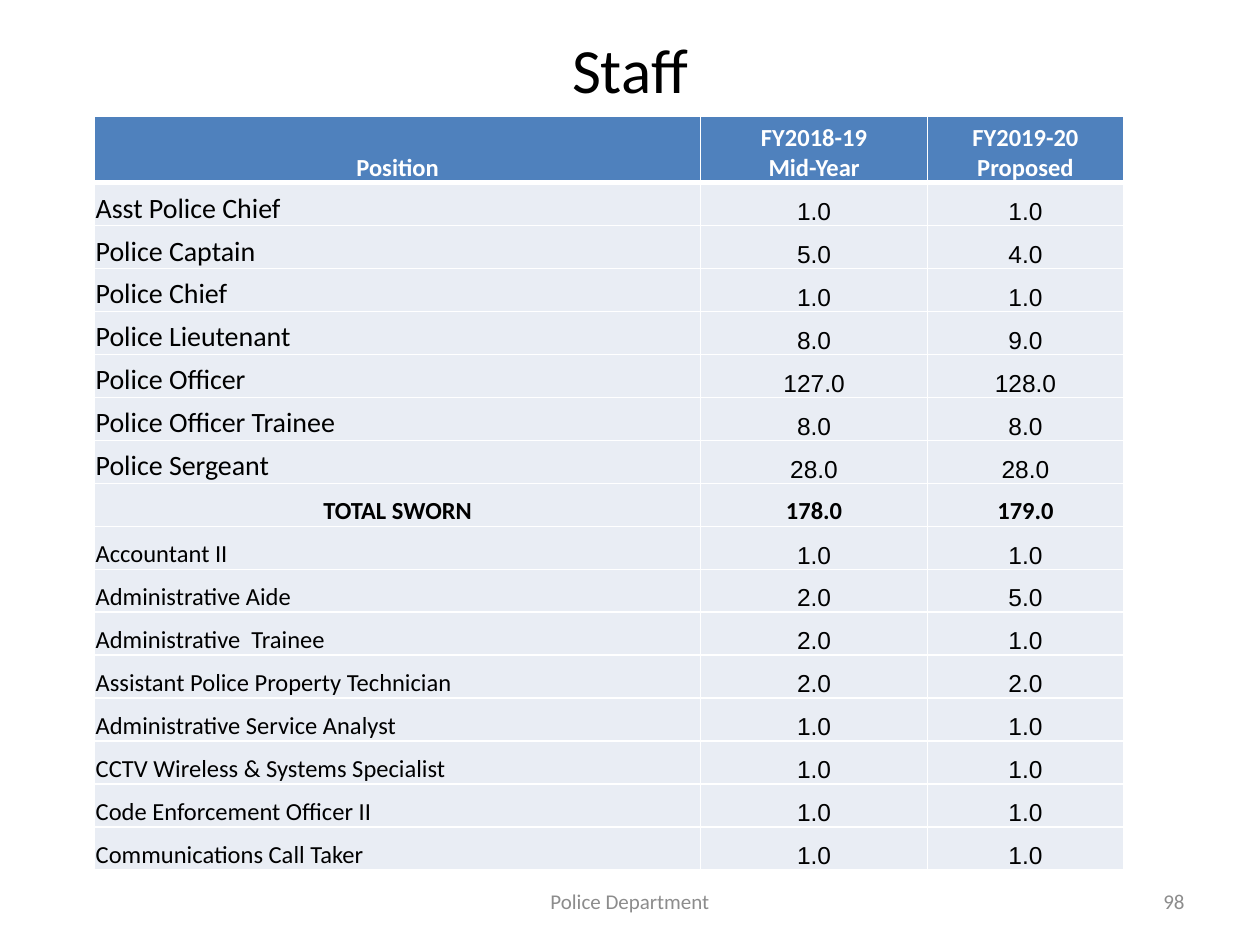
"""Build the police department staff slide."""
import dataclasses

import lxml.etree
import pptx
import pptx.dml.color
import pptx.enum.text
import pptx.oxml.ns
import pptx.util

Pt = pptx.util.Pt
ALIGN = pptx.enum.text.PP_ALIGN
ANCHOR = pptx.enum.text.MSO_ANCHOR


@dataclasses.dataclass(frozen=True)
class Theme:
    text: str = "000000"
    white: str = "FFFFFF"
    header: str = "4F81BD"
    body: str = "E9EDF4"
    muted: str = "8C8C8C"
    font: str = "Calibri"
    number_font: str = "Arial"
    title_size: int = 36
    sworn_size: int = 16
    table_size: int = 14
    footer_size: int = 12


def rgb(value):
    return pptx.dml.color.RGBColor.from_string(value)


def write(para, text, *, font, size, color, bold=False, align=ALIGN.CENTER, indent=0):
    para.alignment = align
    if indent:
        properties = para._p.get_or_add_pPr()
        properties.set("marL", "0")
        properties.set("indent", str(Pt(indent)))
    span = para.add_run()
    span.text = text
    span.font.name = font
    span.font.size = Pt(size)
    span.font.bold = bold
    span.font.color.rgb = rgb(color)


class StaffSlide:
    def __init__(self, page, theme):
        self.page = page
        self.theme = theme

    def text(self, text, left, top, width, height, **style):
        box = self.page.shapes.add_textbox(Pt(left), Pt(top), Pt(width), Pt(height))
        frame = box.text_frame
        frame.word_wrap = True
        frame.vertical_anchor = ANCHOR.MIDDLE
        write(frame.paragraphs[0], text, font=self.theme.font, **style)

    def table(self, left, top, widths, heights):
        frame = self.page.shapes.add_table(
            len(heights), len(widths), Pt(left), Pt(top), Pt(sum(widths)), Pt(sum(heights)))
        for column, width in zip(frame.table.columns, widths):
            column.width = Pt(width)
        for row, height in zip(frame.table.rows, heights):
            row.height = Pt(height)
        return frame.table

    def cell(self, cell, lines, fill, top_line=1, bottom_line=1, indent=0, **style):
        cell.margin_left = cell.margin_right = cell.margin_top = Pt(0.7)
        cell.margin_bottom = 0
        cell.vertical_anchor = ANCHOR.BOTTOM
        self.borders(cell, lnL=1, lnR=1, lnT=top_line, lnB=bottom_line)
        cell.fill.solid()
        cell.fill.fore_color.rgb = rgb(fill)
        frame = cell.text_frame
        for index, line in enumerate(lines):
            para = frame.add_paragraph() if index else frame.paragraphs[0]
            write(para, line, indent=0 if index else indent, **style)

    def borders(self, cell, **widths):
        qn = pptx.oxml.ns.qn
        properties = cell._tc.get_or_add_tcPr()
        for side, width in widths.items():
            line = lxml.etree.SubElement(properties, qn(f"a:{side}"), w=str(Pt(width)))
            fill = lxml.etree.SubElement(line, qn("a:solidFill"))
            lxml.etree.SubElement(fill, qn("a:srgbClr"), val=self.theme.white)


HEADERS = [
    (["Position"], 0),
    (["FY2018-19", "Mid-Year"], -16),
    (["FY2019-20 Proposed"], -6),
]
SWORN = [
    ("Asst Police Chief", "1.0", "1.0"),
    ("Police Captain", "5.0", "4.0"),
    ("Police Chief", "1.0", "1.0"),
    ("Police Lieutenant", "8.0", "9.0"),
    ("Police Officer", "127.0", "128.0"),
    ("Police Officer Trainee", "8.0", "8.0"),
    ("Police Sergeant", "28.0", "28.0"),
]
TOTAL = ("TOTAL SWORN", "178.0", "179.0")
CIVILIAN = [
    ("Accountant II", "1.0", "1.0"),
    ("Administrative Aide", "2.0", "5.0"),
    ("Administrative  Trainee", "2.0", "1.0"),
    ("Assistant Police Property Technician", "2.0", "2.0"),
    ("Administrative Service Analyst", "1.0", "1.0"),
    ("CCTV Wireless & Systems Specialist", "1.0", "1.0"),
    ("Code Enforcement Officer II", "1.0", "1.0"),
    ("Communications Call Taker", "1.0", "1.0"),
]


def main():
    theme = Theme()
    deck = pptx.Presentation()
    deck.slide_width, deck.slide_height = Pt(720), Pt(540)
    slide = StaffSlide(deck.slides.add_slide(deck.slide_layouts[6]), theme)

    slide.text("Staff", 36, 12, 648, 54, size=theme.title_size, color=theme.text)

    staff = [*SWORN, TOTAL, *CIVILIAN]
    table = slide.table(54, 66.2, [346.4, 129.6, 112], [38.2] + [24.55] * len(staff))
    for column, (lines, indent) in enumerate(HEADERS):
        slide.cell(table.cell(0, column), lines, theme.header, bottom_line=3, indent=indent,
                   font=theme.font, size=theme.table_size, color=theme.white, bold=True)

    for row, record in enumerate(staff, start=1):
        total = record is TOTAL
        for column, value in enumerate(record):
            label = column == 0
            slide.cell(
                table.cell(row, column), [value], theme.body,
                top_line=3 if row == 1 else 1,
                font=theme.font if label or total else theme.number_font,
                size=theme.sworn_size if label and record in SWORN else theme.table_size,
                color=theme.text, bold=total,
                align=ALIGN.LEFT if label and not total else ALIGN.CENTER)

    footer = {"size": theme.footer_size, "color": theme.muted}
    slide.text("Police Department", 246, 500.5, 228, 28.75, **footer)
    slide.text("98", 516, 500.5, 168, 28.75, align=ALIGN.RIGHT, **footer)
    deck.save("out.pptx")


if __name__ == "__main__":
    main()
